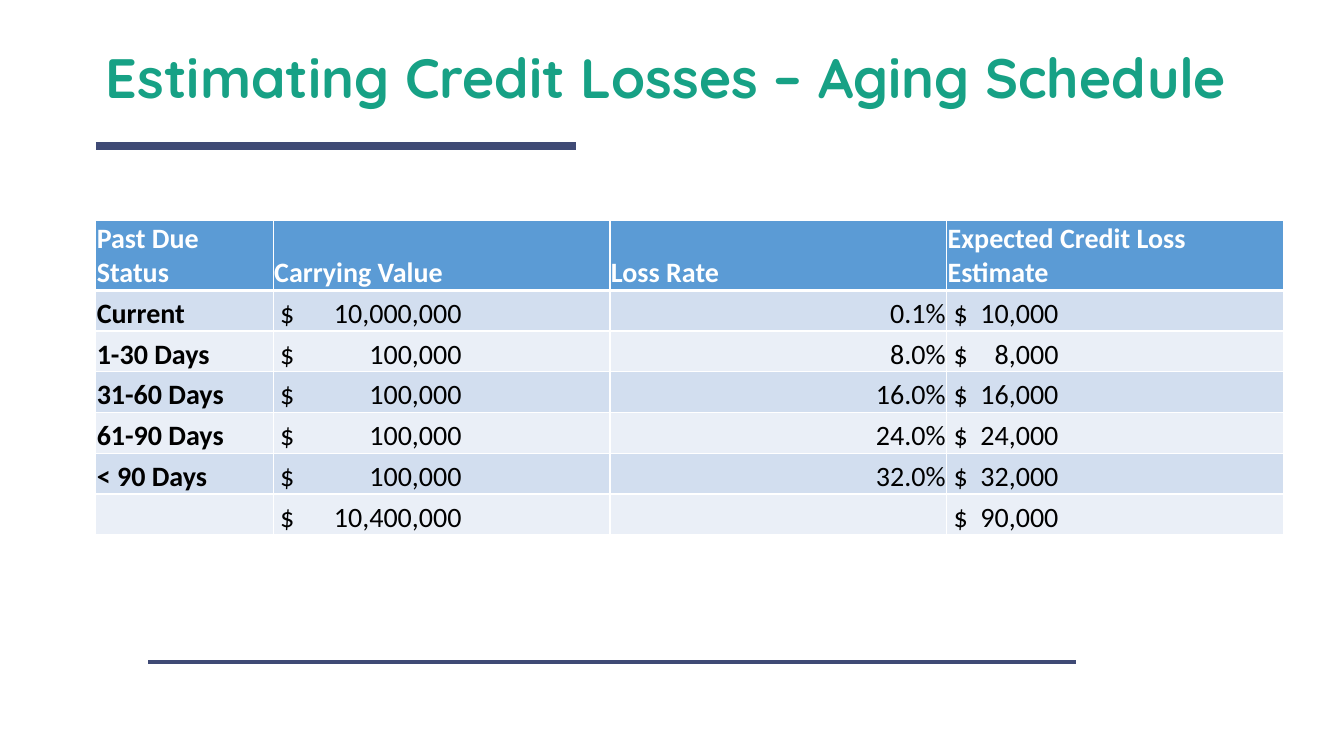
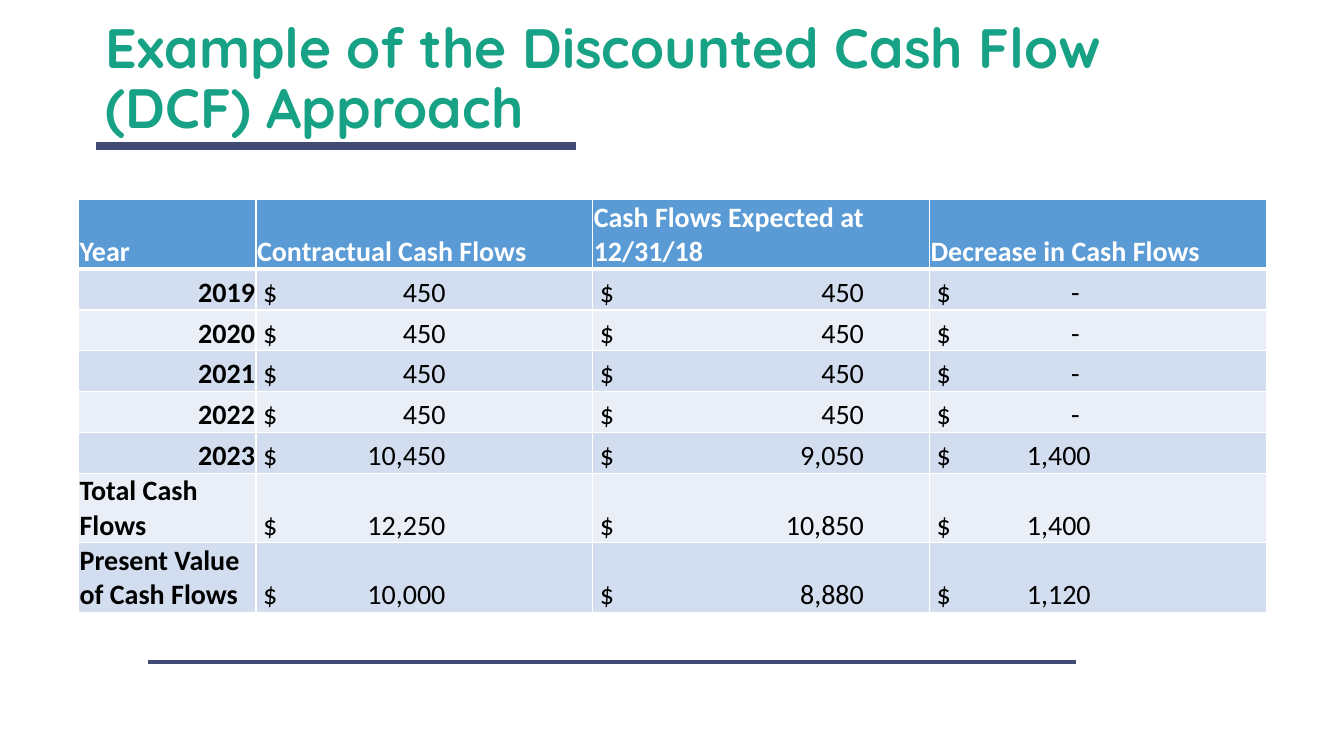
from lxml import etree
from pptx import Presentation
from pptx.dml.color import RGBColor
from pptx.enum import shapes, text
from pptx.oxml import ns
from pptx.util import Inches, Pt

TEAL = RGBColor(0x17, 0xA1, 0x85)
NAVY = RGBColor(0x3F, 0x4A, 0x75)
BLUE = RGBColor(0x5B, 0x9B, 0xD5)
DARK_BAND = RGBColor(0xD2, 0xDE, 0xEF)
LIGHT_BAND = RGBColor(0xEA, 0xEF, 0xF7)
WHITE = RGBColor(0xFF, 0xFF, 0xFF)
BLACK = RGBColor(0x00, 0x00, 0x00)

RULES = [(0.95, 5.71, 1.45, 6), (1.47, 10.67, 6.57, 3)]
COLUMN_WIDTHS = [1.76, 3.34, 3.34, 3.34]
DASH_OFFSET = 0.11

SLIDES = [
    {
        "title": "Estimating Credit Losses – Aging Schedule",
        "box": (0.95, 2.19, 11.77, 2.83),
        "tabs": [None, 1.8, None, 1.04],
        "rows": [
            ["Past Due Status", "Carrying Value", "Loss Rate", "Expected Credit Loss Estimate"],
            ["Current", "10,000,000", "0.1%", "10,000"],
            ["1-30 Days", "100,000", "8.0%", "8,000"],
            ["31-60 Days", "100,000", "16.0%", "16,000"],
            ["61-90 Days", "100,000", "24.0%", "24,000"],
            ["< 90 Days", "100,000", "32.0%", "32,000"],
            ["", "10,400,000", "", "90,000"],
        ],
    },
    {
        "title": "Example of the Discounted Cash Flow (DCF) Approach",
        "box": (0.78, 1.98, 11.77, 3.24),
        "tabs": [None, 1.81, 2.62, 1.53],
        "rows": [
            ["Year", "Contractual Cash Flows", "Cash Flows Expected at 12/31/18",
             "Decrease in Cash Flows"],
            ["2019", "450", "450", "-"],
            ["2020", "450", "450", "-"],
            ["2021", "450", "450", "-"],
            ["2022", "450", "450", "-"],
            ["2023", "10,450", "9,050", "1,400"],
            ["Total Cash Flows", "12,250", "10,850", "1,400"],
            ["Present Value of Cash Flows", "10,000", "8,880", "1,120"],
        ],
    },
]


def apply_format(target, values):
    for name, value in values.items():
        setattr(target, name, value)


def add_borders(cell, widths):
    properties = cell._tc.get_or_add_tcPr()
    for side, width in widths.items():
        line = etree.SubElement(properties, ns.qn(f"a:ln{side}"), w=str(Pt(width)))
        fill = etree.SubElement(line, ns.qn("a:solidFill"))
        etree.SubElement(fill, ns.qn("a:srgbClr"), val=str(WHITE))


presentation = Presentation()
presentation.slide_width = Inches(13.33)
presentation.slide_height = Inches(7.5)
title_only = presentation.slide_layouts[5]

for content in SLIDES:
    slide = presentation.slides.add_slide(title_only)

    for left, right, top, width in RULES:
        rule = slide.shapes.add_connector(
            shapes.MSO_CONNECTOR.STRAIGHT,
            Inches(left), Inches(top), Inches(right), Inches(top))
        rule.line.color.rgb = NAVY
        rule.line.width = Pt(width)
        etree.SubElement(rule.element.spPr, ns.qn("a:effectLst"))

    title = slide.shapes.title
    apply_format(title, {"left": Inches(0.95), "top": Inches(0.4),
                         "width": Inches(11.47), "height": Inches(0.8)})
    apply_format(title.text_frame, {
        "text": content["title"], "word_wrap": True,
        "auto_size": text.MSO_AUTO_SIZE.NONE,
        "vertical_anchor": text.MSO_ANCHOR.MIDDLE})
    paragraph = title.text_frame.paragraphs[0]
    apply_format(paragraph, {"alignment": text.PP_ALIGN.LEFT, "line_spacing": 0.9})
    apply_format(paragraph.font, {"name": "Quicksand", "size": Pt(39.6), "bold": True})
    paragraph.font.color.rgb = TEAL

    rows = content["rows"]
    table = slide.shapes.add_table(
        len(rows), len(COLUMN_WIDTHS), *map(Inches, content["box"])).table
    for column, width in zip(table.columns, COLUMN_WIDTHS):
        column.width = Inches(width)

    for row_index, row in enumerate(rows):
        is_header = row_index == 0
        band = BLUE if is_header else DARK_BAND if row_index % 2 else LIGHT_BAND
        for column_index, value in enumerate(row):
            tab = content["tabs"][column_index]
            is_amount = not is_header and tab is not None
            cell = table.cell(row_index, column_index)
            apply_format(cell, {
                "margin_left": Inches(0.07 if is_amount else 0.01),
                "margin_top": Inches(0.01), "margin_right": Inches(0.01),
                "margin_bottom": 0, "vertical_anchor": text.MSO_ANCHOR.BOTTOM})
            add_borders(cell, {"L": 1, "R": 1, "T": 3 if row_index == 1 else 1,
                               "B": 3 if is_header else 1})
            cell.fill.solid()
            cell.fill.fore_color.rgb = band

            paragraph = cell.text_frame.paragraphs[0]
            if is_amount:
                position = tab - DASH_OFFSET if value == "-" else tab
                tabs = etree.SubElement(paragraph._p.get_or_add_pPr(), ns.qn("a:tabLst"))
                etree.SubElement(tabs, ns.qn("a:tab"), pos=str(Inches(position)), algn="r")
                value = f"$\t{value}"
            if value:
                paragraph.add_run().text = value
            if value.isdigit() or value.endswith("%"):
                paragraph.alignment = text.PP_ALIGN.RIGHT
            apply_format(paragraph.font, {
                "name": "Calibri", "size": Pt(20),
                "bold": is_header or column_index == 0})
            paragraph.font.color.rgb = WHITE if is_header else BLACK

presentation.save("out.pptx")
